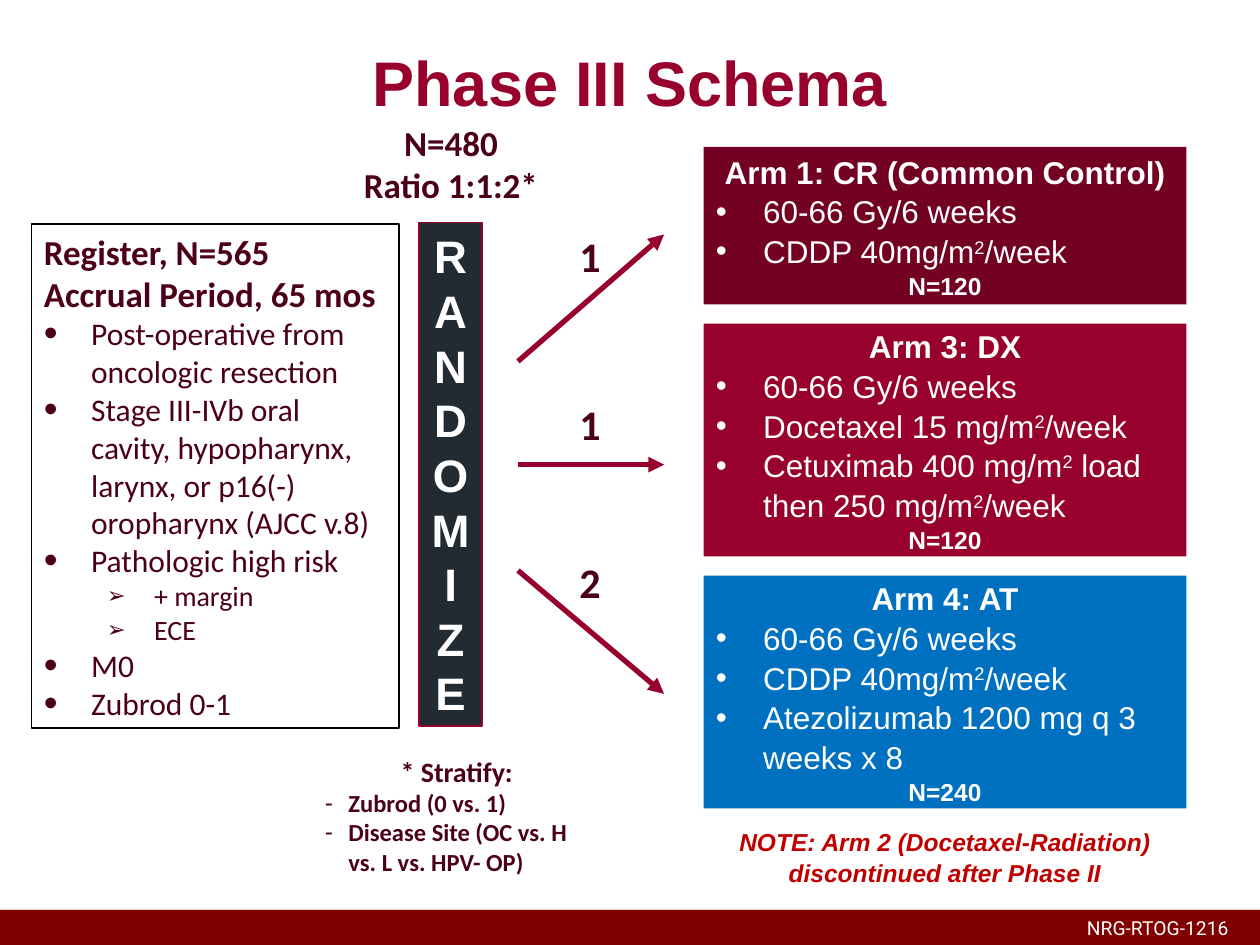
from pptx import Presentation
from pptx.dml.color import RGBColor
from pptx.enum.shapes import MSO_CONNECTOR, MSO_SHAPE
from pptx.enum.text import MSO_ANCHOR, PP_ALIGN
from pptx.oxml import parse_xml
from pptx.oxml.ns import nsdecls
from pptx.util import Pt

WINE = RGBColor(0x98, 0x01, 0x2E)
DARK = RGBColor(0x72, 0x01, 0x23)
PLUM = RGBColor(0x4C, 0x00, 0x17)
NAVY = RGBColor(0x22, 0x2A, 0x32)
BLUE = RGBColor(0x00, 0x70, 0xC0)
MAROON = RGBColor(0x80, 0x00, 0x00)
RED = RGBColor(0xC0, 0x00, 0x00)
WHITE = RGBColor(0xFF, 0xFF, 0xFF)
BLACK = RGBColor(0x00, 0x00, 0x00)

SHADE = (
    f'<a:effectLst {nsdecls("a")}>'
    '<a:outerShdw blurRad="39370" dist="22860" dir="5400000" rotWithShape="0">'
    '<a:srgbClr val="000000"><a:alpha val="35000"/></a:srgbClr>'
    '</a:outerShdw></a:effectLst>'
)


def add_bullet(para, mark, scale, left, hang):
    props = para._p.get_or_add_pPr()
    props.set("marL", str(Pt(left)))
    props.set("indent", str(-Pt(hang)))
    for tag in (f'buSzPct {nsdecls("a")} val="{scale * 1000}"',
                f'buFont {nsdecls("a")} typeface="Arial"',
                f'buChar {nsdecls("a")} char="{mark}"'):
        props.append(parse_xml(f"<a:{tag}/>"))


def add_text(frame, text, size=18, face="Arial", color=WHITE, bold=False,
             italic=False, align=PP_ALIGN.LEFT, mark=None, scale=100,
             left=27, hang=27, level=0, space=None):
    """Add a paragraph; parts between ^ signs are superscript."""
    para = frame.paragraphs[0]
    if para.runs:
        para = frame.add_paragraph()
    para.level = level
    if mark:
        add_bullet(para, mark, scale, left, hang)
    para.alignment = align
    if space:
        para.line_spacing = space
    for i, part in enumerate(text.split("^")):
        run = para.add_run()
        run.text = part
        font = run.font
        font.size, font.name = Pt(size), face
        font.bold, font.italic = bold, italic
        font.color.rgb = color
        if i % 2:
            run._r.get_or_add_rPr().set("baseline", "30000")


def add_frame(slide, x, y, w, h, wrap=True):
    box = slide.shapes.add_textbox(Pt(x), Pt(y), Pt(w), Pt(h))
    box.text_frame.word_wrap = wrap
    return box.text_frame


def add_box(slide, x, y, w, h, fill=None, line=None):
    box = slide.shapes.add_shape(MSO_SHAPE.RECTANGLE, Pt(x), Pt(y), Pt(w), Pt(h))
    box.shadow.inherit = False
    if fill is None:
        box.fill.background()
    else:
        box.fill.solid()
        box.fill.fore_color.rgb = fill
    if line is None:
        box.line.fill.background()
    else:
        box.line.color.rgb = line
        box.line.width = Pt(0.75)
    box.text_frame.word_wrap = True
    box.text_frame.vertical_anchor = MSO_ANCHOR.MIDDLE
    return box


def add_arrow(slide, start, end):
    line = slide.shapes.add_connector(
        MSO_CONNECTOR.STRAIGHT, Pt(296), Pt(start), Pt(379.5), Pt(end))
    line.line.color.rgb = WINE
    line.line.width = Pt(3)
    line.line._get_or_add_ln().append(
        parse_xml(f'<a:tailEnd {nsdecls("a")} type="triangle"/>'))
    line._element.spPr.append(parse_xml(f'<a:effectLst {nsdecls("a")}/>'))


def add_arm(slide, y, h, fill, title, items, count):
    frame = add_box(slide, 402, y, 276, h, fill).text_frame
    head = dict(bold=True, align=PP_ALIGN.CENTER, space=1.05)
    add_text(frame, title, **head)
    for item in items:
        add_text(frame, item, mark="•", space=1.05)
    add_text(frame, count, size=14, **head)


def add_entry(slide):
    """Add the box of registration criteria."""
    frame = add_box(slide, 18, 128, 210, 288, line=BLACK).text_frame
    look = dict(face="Calibri", color=PLUM)
    main = dict(look, mark="•", scale=125)
    sub = dict(look, size=16, mark="➢", scale=80, left=63, level=1)
    for text in ("Register, N=565", "Accrual Period, 65 mos"):
        add_text(frame, text, size=20, bold=True, **look)
    for text, style in (
            ("Post-operative from oncologic resection", main),
            ("Stage III-IVb oral cavity, hypopharynx, larynx, or p16(-) "
             "oropharynx (AJCC v.8)", main),
            ("Pathologic high risk", main),
            ("+ margin", sub),
            ("ECE", sub),
            ("M0", main),
            ("Zubrod 0-1", main)):
        add_text(frame, text, **style)


def add_notes(slide):
    """Add the ratio, the strata and the remark on Arm 2."""
    look = dict(face="Calibri", color=PLUM, bold=True)
    frame = add_frame(slide, 198, 66, 119.5, 55.5)
    for text in ("N=480", "Ratio 1:1:2*"):
        add_text(frame, text, size=20, align=PP_ALIGN.CENTER, **look)

    frame = add_frame(slide, 178.5, 427.5, 165, 78)
    add_text(frame, "* Stratify:", size=16, align=PP_ALIGN.CENTER, **look)
    for text in ("Zubrod (0 vs. 1)", "Disease Site (OC vs. H vs. L vs. HPV- OP)"):
        add_text(frame, text, size=14, mark="-", left=13.5, hang=13.5, **look)

    for text, y in (("1", 128), ("1", 224), ("2", 314.5)):
        add_text(add_frame(slide, 324, y, 26.5, 36, wrap=False), text,
                 size=24, **look)

    add_text(add_frame(slide, 414, 468.5, 252, 41),
             "NOTE: Arm 2 (Docetaxel-Radiation) discontinued after Phase II",
             size=14, color=RED, bold=True, italic=True,
             align=PP_ALIGN.CENTER, space=1.05)


def main():
    deck = Presentation()
    deck.slide_width, deck.slide_height = Pt(720), Pt(540)
    slide = deck.slides.add_slide(deck.slide_layouts[6])

    bar = add_box(slide, 0, 520, 720, 20, MAROON)
    props = bar._element.spPr
    props.remove(props[-1])
    props.append(parse_xml(SHADE))
    add_text(add_frame(slide, 614, 520, 104, 20.5, wrap=False),
             "NRG-RTOG-1216", size=11, face="Roboto")

    frame = add_frame(slide, 0, 18, 720, 42)
    frame.margin_top = Pt(7)
    add_text(frame, "Phase III Schema", size=36, color=WINE, bold=True,
             align=PP_ALIGN.CENTER)

    tower = add_box(slide, 239.5, 127, 36, 288, NAVY, WINE)
    add_text(tower.text_frame, "RANDOMIZE", size=26, bold=True,
             align=PP_ALIGN.CENTER, space=Pt(31.2))

    dose = "60-66 Gy/6 weeks"
    add_arm(slide, 84, 90, DARK, "Arm 1: CR (Common Control)",
            (dose, "CDDP 40mg/m^2^/week"), "N=120")
    add_arm(slide, 185, 133, WINE, "Arm 3: DX",
            (dose, "Docetaxel 15 mg/m^2^/week",
             "Cetuximab 400 mg/m^2^ load then 250 mg/m^2^/week"), "N=120")
    add_arm(slide, 329, 133, BLUE, "Arm 4: AT",
            (dose, "CDDP 40mg/m^2^/week",
             "Atezolizumab 1200 mg q 3 weeks x 8"), "N=240")
    for start, end in ((206.5, 134), (265.5, 265.5), (326, 396.5)):
        add_arrow(slide, start, end)

    add_entry(slide)
    add_notes(slide)
    deck.save("out.pptx")


if __name__ == "__main__":
    main()
